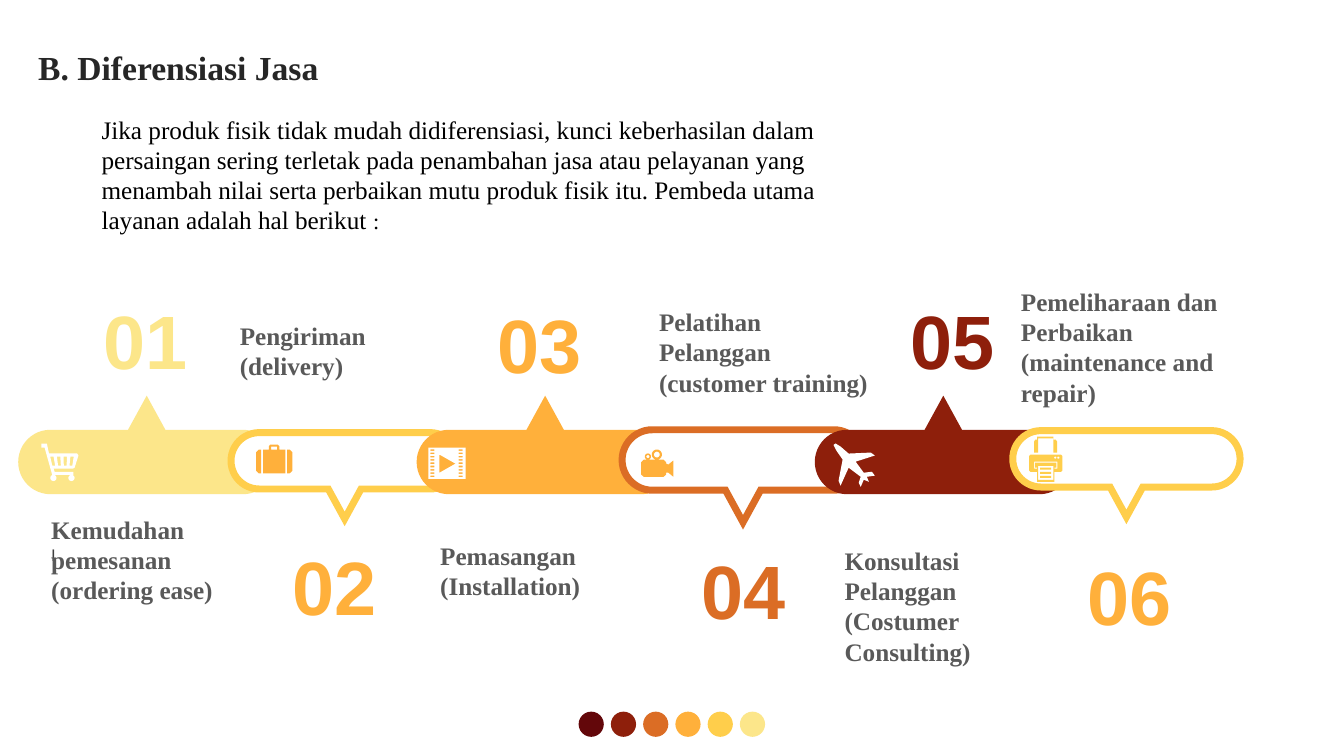
from dataclasses import dataclass
from math import cos, pi, sin

from lxml.etree import SubElement
from pptx import Presentation
from pptx.dml.color import RGBColor
from pptx.enum.shapes import MSO_SHAPE
from pptx.enum.text import MSO_ANCHOR, MSO_AUTO_SIZE, PP_ALIGN
from pptx.oxml.ns import qn
from pptx.shapes.autoshape import Shape
from pptx.util import Pt

Point = tuple[float, float]
Path = list[Point]

MAROON, BRICK, RUST = "63070A", "8E1F0B", "DB6D25"
AMBER, GOLD, CREAM = "FFB03B", "FFCE4B", "FCE68A"
WHITE, BLACK, INK, GREY, DARK = "FFFFFF", "000000", "262626", "595959", "404040"
SERIF, SANS = "Times New Roman", "Arial"


@dataclass
class Pill:
    left: float
    top: float
    width: float
    height: float
    fill: str
    line: str = ""
    up: bool = False


@dataclass
class Icon:
    left: float
    top: float
    fill: str
    paths: list[Path]


@dataclass
class Label:
    text: str
    left: float
    top: float
    width: float
    height: float
    size: float = 18
    color: str = GREY
    font: str = SERIF
    bold: bool = True
    align: PP_ALIGN = PP_ALIGN.LEFT


def digit(text: str, left: float, top: float, color: str) -> Label:
    return Label(text, left, top, 79.9, 72.7, 54, color, SANS, align=PP_ALIGN.CENTER)


def note(text: str, left: float, top: float, height: float) -> Label:
    return Label(text, left, top, 167.8, height)


def box(left: float, top: float, width: float, height: float) -> Path:
    right, low = left + width, top + height
    return [(left, top), (right, top), (right, low), (left, low)]


def arc(x: float, y: float, radius: float, start: float, sweep: float) -> Path:
    """Points along an arc, clockwise, with angles in half turns."""
    turns = [pi * (start + sweep * i / 24) for i in range(25)]
    return [(x + radius * cos(t), y + radius * sin(t)) for t in turns]


def disc(x: float, y: float, radius: float) -> Path:
    return arc(x, y, radius, 0, 2)


def rgb(color: str) -> RGBColor:
    return RGBColor.from_string(color)


def paint(shape: Shape, fill: str, line: str = "") -> None:
    shape.shadow.inherit = False
    shape.fill.solid()
    shape.fill.fore_color.rgb = rgb(fill)
    if line:
        shape.line.color.rgb = rgb(line)
        shape.line.width = Pt(5)
        SubElement(shape.line._get_or_add_ln(), qn("a:miter"), lim="800000")
    else:
        shape.line.fill.background()


def trace(left: float, top: float, paths: list[Path]) -> Shape:
    """Outline closed paths, whose overlaps become holes."""
    spots = [[(Pt(left + x), Pt(top + y)) for x, y in path] for path in paths]
    pen = slide.shapes.build_freeform(*spots[0][0])
    for i, path in enumerate(spots):
        if i:
            pen.move_to(*path[0])
        pen.add_line_segments(path[1:], close=True)
    return pen.convert_to_shape()


def draw_pill(pill: Pill) -> None:
    width, high = pill.width, pill.height
    radius, mid, half, depth = high / 2, width / 2, 0.29 * high, 0.53 * high
    right = arc(width - radius, radius, radius, -0.5, 1)
    left = arc(radius, radius, radius, 0.5, 1)
    if pill.up:
        path = [(mid - half, 0), (mid, -depth), (mid + half, 0), *right, *left]
    else:
        path = [*right, (mid + half, high), (mid, high + depth), (mid - half, high), *left]
    paint(trace(pill.left, pill.top, [path]), pill.fill, pill.line)


def write(label: Label) -> Shape:
    area = slide.shapes.add_textbox(
        Pt(label.left), Pt(label.top), Pt(label.width), Pt(label.height))
    frame = area.text_frame
    frame.word_wrap = True
    frame.auto_size = MSO_AUTO_SIZE.SHAPE_TO_FIT_TEXT
    frame.text = label.text
    frame.paragraphs[0].alignment = label.align
    style(frame.paragraphs[0].runs[0].font, label)
    return area


def style(font, label: Label) -> None:
    font.name, font.size, font.bold = label.font, Pt(label.size), label.bold
    font.color.rgb = rgb(label.color)


PILLS = [
    Pill(13, 307, 183.6, 46, CREAM, up=True),
    Pill(165, 309, 162.4, 40.3, WHITE, GOLD),
    Pill(297.6, 307, 183.6, 46, AMBER, up=True),
    Pill(444.4, 307, 172.8, 43.2, WHITE, RUST),
    Pill(582, 307, 183.6, 46, BRICK, up=True),
    Pill(723.4, 307.6, 162.4, 40.3, WHITE, GOLD),
]

CART = [
    [(4, 0), (5.5, 7), (25.5, 7), (26.6, 8.5), (23.8, 17.3), (22.5, 18), (8.8, 18),
     (9.6, 20.2), (23, 20.2), (23, 22.4), (7.8, 22.4), (2.4, 3), (0, 3), (0, 0)],
    disc(8.7, 24.6, 2.2), disc(21.6, 24.6, 2.2),
    *[[(6.4 + 4.8 * i, 9.4), (8.8 + 4.8 * i, 9.4), (9.9 + 4.1 * i, 15.8),
       (7.9 + 4.1 * i, 15.8)] for i in range(4)],
]
CASE = [
    [(0, 5.5), (2, 3.6), (3.6, 3.6), (3.6, 20.6), (2, 20.6), (0, 18.7)],
    box(5, 3.6, 15.9, 17),
    [(22.3, 3.6), (24, 3.6), (26, 5.5), (26, 18.7), (24, 20.6), (22.3, 20.6)],
    [(9.2, 3.6), (9.2, 1.2), (10.2, 0), (15.5, 0), (16.6, 1.2), (16.6, 3.6),
     (15, 3.6), (15, 1.6), (10.8, 1.6), (10.8, 3.6)],
]
FILM = [
    box(0, 0, 26.6, 22.3), [(7.9, 5), (19.4, 11.5), (7.9, 18)],
    *[box(x, 1.3 + 2.34 * i, 2.9, 1.1) for x in (1.4, 21.6) for i in range(9)],
]
CAMERA = [
    [(2, 7.2), (16, 7.2), (18, 9.2), (18, 10), (19.4, 10.8), (23, 7.9), (23, 19.4),
     (19.4, 16.5), (18, 16.5), (18, 17.8), (16, 19.6), (2, 19.6), (0, 17.8), (0, 9.2)],
    disc(4.9, 5, 2.2), disc(4.9, 5, 1.1), disc(11.3, 3.6, 3.6), disc(11.3, 3.6, 2.1),
]
PLANE = [
    [(29.5, 23), (23.8, 23.8), (25.3, 27.4), (21.6, 25.9), (19.4, 31), (18, 28),
     (19.4, 23.8), (10.8, 17.3), (5, 30.2), (3.6, 26.6), (6.5, 11.5), (2, 5), (0, 1),
     (1.5, 0), (5, 2.2), (10.8, 7.2), (26.6, 6.5), (29.5, 8.6), (15.8, 13),
     (21.6, 20.9), (27.4, 20.2)],
]
PRINTER = [
    [(1, 13), (22.8, 13), (23.8, 14), (23.8, 24.2), (22.8, 25.2), (18, 25.2),
     (18, 32.4), (5.8, 32.4), (5.8, 25.2), (1, 25.2), (0, 24.2), (0, 14)],
    [(3.6, 18), (20.2, 18), (20.2, 23), (18, 23), (18, 22.3), (19.5, 22.3),
     (19.5, 18.7), (4.3, 18.7), (4.3, 22.3), (5.8, 22.3), (5.8, 23), (3.6, 23)],
    [(5.8, 0), (17.3, 0), (17.3, 2.2), (19, 2.2), (20, 3.6), (20, 11.5), (17.3, 11.5),
     (17.3, 1.4), (6.5, 1.4), (6.5, 11.5), (3.6, 11.5), (3.6, 3.6), (4.4, 2.2), (5.8, 2.2)],
    box(6.5, 20.9, 10.8, 10.1), disc(18.7, 15.1, 0.8), disc(20.9, 15.1, 0.8),
    *[box(7.9, 22.3 + 2.9 * i, 7.9, 1.4) for i in range(3)],
]
ICONS = [
    Icon(29.5, 316.8, WHITE, CART), Icon(182.9, 317.5, AMBER, CASE),
    Icon(306, 319.7, WHITE, FILM), Icon(457.9, 321.1, AMBER, CAMERA),
    Icon(595.4, 316.8, WHITE, PLANE), Icon(735.1, 311.8, GOLD, PRINTER),
]

LABELS = [
    note("Pengiriman (delivery)", 164.2, 225.4, 50.9),
    note("Pelatihan Pelanggan (customer training)", 463.7, 215.3, 72.7),
    Label("I", 29.5, 385.2, 169.2, 21.8, 12, DARK, SANS, False),
    note("Kemudahan pemesanan (ordering ease)", 29.5, 363.6, 72.7),
    note("Pemasangan (Installation)", 307.4, 382.3, 50.9),
    note("Konsultasi Pelanggan (Costumer Consulting)", 596.2, 385.9, 94.5),
    note("Pemeliharaan dan Perbaikan (maintenance and repair)", 722.2, 200.9, 94.5),
    digit("01", 64.1, 206.6, CREAM), digit("02", 198.7, 382.3, AMBER),
    digit("03", 345.6, 209.5, AMBER), digit("04", 491, 385.2, RUST),
    digit("05", 640.1, 206.6, BRICK), digit("06", 766.8, 389.5, AMBER),
]
TITLE = Label("B. Diferensiasi Jasa", 20.2, 20.9, 638.6, 56.9, 24, INK,
              align=PP_ALIGN.JUSTIFY)
INTRO = Label(
    "Jika produk fisik tidak mudah didiferensiasi, kunci keberhasilan dalam persaingan "
    "sering terletak pada penambahan jasa atau pelayanan yang menambah nilai serta "
    "perbaikan mutu produk fisik itu. Pembeda utama layanan adalah hal berikut ",
    65.5, 77.8, 559.4, 94.5, color=BLACK, bold=False)

deck = Presentation()
deck.slide_width, deck.slide_height = Pt(960), Pt(540)
slide = deck.slides.add_slide(deck.slide_layouts[6])

for i, color in enumerate([MAROON, BRICK, RUST, AMBER, GOLD, CREAM]):
    paint(slide.shapes.add_shape(
        MSO_SHAPE.OVAL, Pt(413.3 + 23.04 * i), Pt(508.3), Pt(18), Pt(18)), color)

title = write(TITLE).text_frame
title.auto_size = MSO_AUTO_SIZE.NONE
title.vertical_anchor = MSO_ANCHOR.MIDDLE
title.paragraphs[0].line_spacing = 0.9
title.paragraphs[0].space_before = Pt(10)

for pill in PILLS:
    draw_pill(pill)
for icon in ICONS:
    paint(trace(icon.left, icon.top, icon.paths), icon.fill)
for label in LABELS:
    write(label)

colon = write(INTRO).text_frame.paragraphs[0].add_run()
colon.text = ":"
style(colon.font, INTRO)
colon.font.size = Pt(16)

deck.save("out.pptx")
